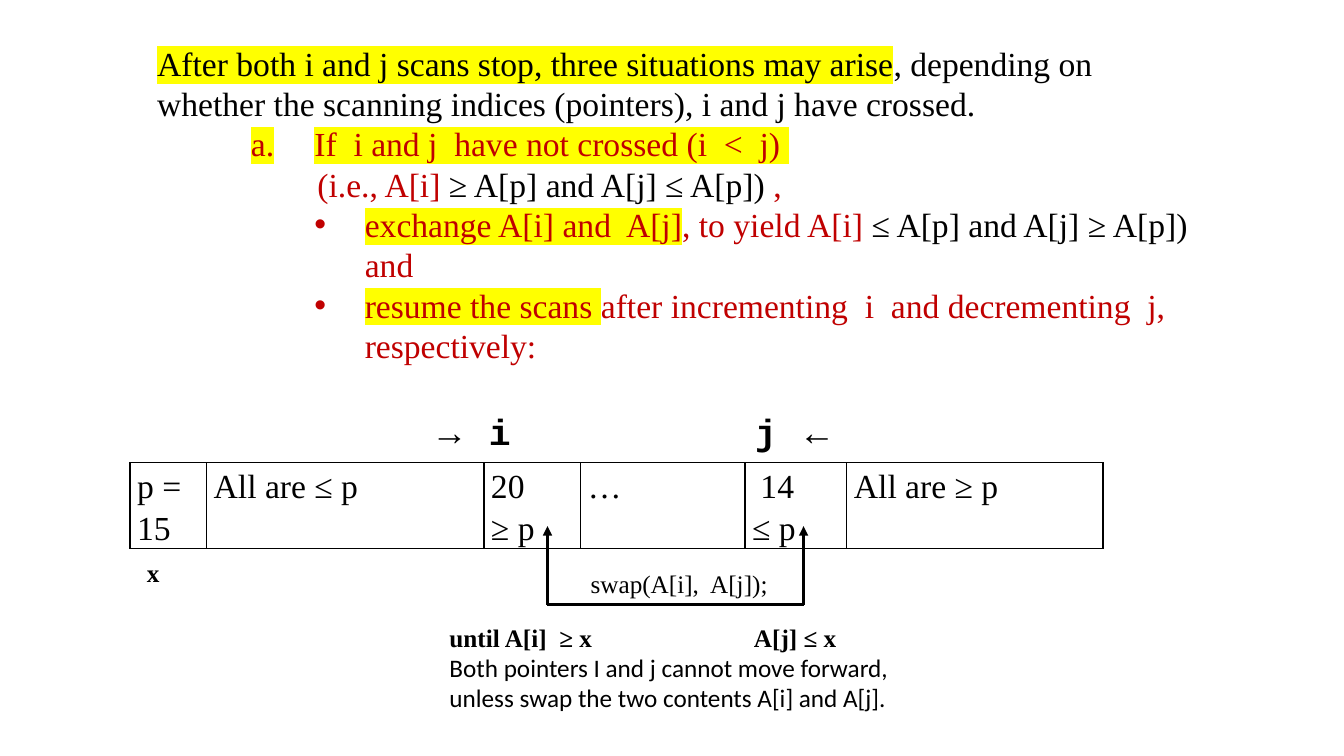
"""Build a slide on swapping A[i] and A[j] when the quicksort scans have not crossed."""
from lxml import etree
from pptx import Presentation
from pptx.dml.color import RGBColor
from pptx.enum.shapes import MSO_CONNECTOR
from pptx.enum.text import MSO_ANCHOR
from pptx.oxml.ns import qn
from pptx.util import Inches, Pt

STRAIGHT = MSO_CONNECTOR.STRAIGHT
MIDDLE, TOP = MSO_ANCHOR.MIDDLE, MSO_ANCHOR.TOP
BLACK = RGBColor(0, 0, 0)
RED = RGBColor(0xC0, 0, 0)
WHITE = RGBColor(0xFF, 0xFF, 0xFF)
YELLOW = RGBColor(0xFF, 0xFF, 0)
SERIF, MONO, SANS = "Times New Roman", "Courier New", "Calibri"

deck = Presentation()
deck.slide_width, deck.slide_height = Inches(13.33), Inches(7.5)
page = deck.slides.add_slide(deck.slide_layouts[6])


def add_span(para, text, size, color=BLACK, marked=False, name=SERIF, bold=False):
    """Append a formatted run, highlighted when marked."""
    span = para.add_run()
    span.text = text
    span.font.color.rgb = color
    for key, value in {"size": Pt(size), "name": name, "bold": bold}.items():
        setattr(span.font, key, value)
    if marked:
        highlight = etree.Element(qn("a:highlight"))
        etree.SubElement(highlight, qn("a:srgbClr"), val=str(YELLOW))
        span.font.fill._xPr.find(qn("a:solidFill")).addnext(highlight)


def add_box(left, top, width, height, anchor=TOP, wrap=True):
    """Add a text box and return its text frame."""
    frame = page.shapes.add_textbox(*map(Inches, (left, top, width, height))).text_frame
    frame.word_wrap, frame.vertical_anchor = wrap, anchor
    return frame


CELLS = [("p = 15", 0.76), ("All are ≤ p", 2.75), ("20\v≥ p", 0.96),
         ("…", 1.63), (" 14\v≤ p", 1.01), ("All are ≥ p", 2.54)]
array = page.shapes.add_table(1, len(CELLS), Inches(1.29), Inches(4.59),
                              Inches(9.65), Inches(0.84)).table
array.first_row = array.horz_banding = False
for index, (text, width) in enumerate(CELLS):
    array.columns[index].width = Inches(width)
    cell = array.cell(0, index)
    cell.fill.solid()
    cell.fill.fore_color.rgb = WHITE
    for key, value in {"margin_left": 0.07, "margin_right": 0.07,
                       "margin_top": 0, "margin_bottom": 0}.items():
        setattr(cell, key, Inches(value))
    para = cell.text_frame.paragraphs[0]
    para.line_spacing = 1.15
    for number, part in enumerate(text.split("\v")):
        if number:
            para.add_line_break()
        add_span(para, part, 24)
    for place, side in enumerate(("lnL", "lnR", "lnT", "lnB")):
        border = etree.Element(qn("a:" + side), w=str(Pt(1)))
        fill = etree.SubElement(border, qn("a:solidFill"))
        etree.SubElement(fill, qn("a:srgbClr"), val=str(BLACK))
        cell._tc.get_or_add_tcPr().insert(place, border)

SWAP_LEFT, SWAP_RIGHT, SWAP_TOP, SWAP_BOTTOM = 5.43, 7.97, 5.22, 6
for end_x, end_y, start_x, arrow in [(SWAP_LEFT, SWAP_TOP, SWAP_LEFT, True),
                                     (SWAP_RIGHT, SWAP_BOTTOM, SWAP_LEFT, False),
                                     (SWAP_RIGHT, SWAP_TOP, SWAP_RIGHT, True)]:
    line = page.shapes.add_connector(
        STRAIGHT, *map(Inches, (start_x, SWAP_BOTTOM, end_x, end_y)))
    line.line.color.rgb = BLACK
    line.line.width = Pt(2.25)
    if arrow:
        etree.SubElement(line.line._get_or_add_ln(), qn("a:tailEnd"), type="triangle")
    etree.SubElement(line._element.spPr, qn("a:effectLst"))

STEPS = [
    (0.07, 0, None, [("After both i and j scans stop, three situations may arise", BLACK, True),
                     (", depending on", BLACK, False)]),
    (0.07, 0, None, [("whether the scanning indices (pointers), i and j have crossed.",
                      BLACK, False)]),
    (1.63, -0.63, "a.", [("If  i and j  have not crossed (i  <  j) ", RED, True)]),
    (1.66, 0, None, [("(i.e., A[i]", RED, False),
                     (" ≥ A[p] and A[j] ≤ A[p]) ", BLACK, False), (",", RED, False)]),
    (2.13, -0.5, "•", [("exchange A[i] and  A[j]", RED, True), (", to yield A[i]", RED, False),
                       (" ≤ A[p] and A[j] ≥ A[p]) ", BLACK, False), (" and", RED, False)]),
    (2.13, -0.5, "•", [("resume the scans ", RED, True),
                       ("after incrementing  i  and decrementing  j, respectively:",
                        RED, False)]),
]
steps = add_box(1.39, 0.35, 10.66, 4.21, MIDDLE)
for index, (margin, indent, bullet, spans) in enumerate(STEPS):
    para = steps.add_paragraph() if index else steps.paragraphs[0]
    layout = para._p.get_or_add_pPr()
    layout.set("marL", str(Inches(margin)))
    layout.set("indent", str(Inches(indent)))
    if bullet == "a.":
        etree.SubElement(layout, qn("a:buAutoNum"), type="alphaLcPeriod")
    elif bullet:
        etree.SubElement(layout, qn("a:buFont"), typeface="Arial")
        etree.SubElement(layout, qn("a:buChar"), char=bullet)
    for text, color, marked in spans:
        add_span(para, text, 24, color, marked)

pointers = steps.add_paragraph()
pointers.space_before = Pt(31)
for text, name in [("\t→", SERIF), ("\ti\tj ", MONO), ("←", SERIF)]:
    add_span(pointers, text, 26, name=name, bold=True)

add_span(add_box(1.36, 5.48, 0.33, 0.4, wrap=False).paragraphs[0], "x", 18, bold=True)

notes = add_box(4.36, 6.12, 4.7, 1.01)
until = notes.paragraphs[0]
add_span(until, "until A[i]  ≥ x\tA[j] ≤ x", 18, bold=True)
add_span(notes.add_paragraph(), "Both pointers I and j cannot move forward, "
         "unless swap the two contents A[i] and A[j].", 18, name=SANS)

add_span(add_box(5.76, 5.59, 2.14, 0.4).paragraphs[0], "swap(A[i],  A[j]);", 18)

for para, stops in [(pointers, (2.79, 3.36, 6)), (until, (3.02,))]:
    tabs = etree.SubElement(para._p.get_or_add_pPr(), qn("a:tabLst"))
    for stop in stops:
        etree.SubElement(tabs, qn("a:tab"), pos=str(Inches(stop)), algn="l")

deck.save("out.pptx")
